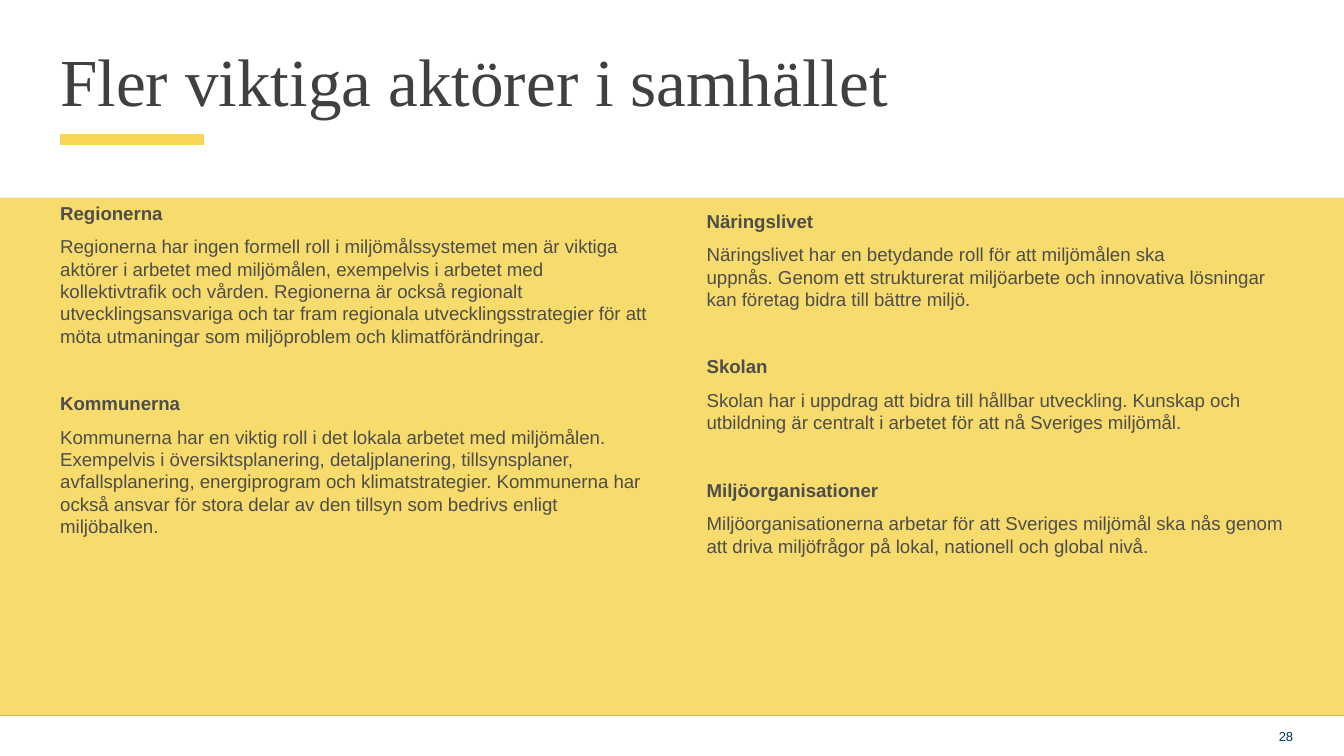
"""Build a slide on further actors in Swedish environmental work."""
from dataclasses import dataclass

from lxml import etree
from pptx import Presentation
from pptx import util as u
from pptx.dml.color import RGBColor
from pptx.enum import shapes, text
from pptx.oxml.ns import qn

SANS, SERIF = "Arial", "Times New Roman"
GREY = "4D4D4A"
NAVY = "003366"
HARD_SPACE = chr(160)


@dataclass
class Actor:
    name: str
    role: str


@dataclass
class Column:
    left: float
    inset: float
    actors: list[Actor]


@dataclass
class Rule:
    left: float
    right: float
    top: float
    color: str
    width: float


COLUMNS = [
    Column(5.16, 0.24, [
        Actor("Näringslivet",
              "Näringslivet har en betydande roll för att miljömålen ska "
              f"uppnås.{HARD_SPACE}Genom ett strukturerat miljöarbete och "
              "innovativa lösningar kan företag bidra till bättre miljö."),
        Actor("Skolan",
              "Skolan har i uppdrag att bidra till hållbar utveckling. "
              "Kunskap och utbildning är centralt i arbetet för att nå "
              "Sveriges miljömål."),
        Actor("Miljöorganisationer",
              "Miljöorganisationerna arbetar för att Sveriges miljömål ska "
              "nås genom att driva miljöfrågor på lokal, nationell och "
              "global nivå."),
    ]),
    Column(0.35, 0.18, [
        Actor("Regionerna",
              "Regionerna har ingen formell roll i miljömålssystemet men är "
              "viktiga aktörer i arbetet med miljömålen, exempelvis i "
              "arbetet med kollektivtrafik och vården. Regionerna är också "
              "regionalt utvecklingsansvariga och tar fram regionala "
              "utvecklingsstrategier för att möta utmaningar som "
              "miljöproblem och klimatförändringar."),
        Actor("Kommunerna",
              "Kommunerna har en viktig roll i det lokala arbetet med "
              "miljömålen. Exempelvis i översiktsplanering, "
              "detaljplanering, tillsynsplaner, avfallsplanering, "
              "energiprogram och klimatstrategier. Kommunerna har också "
              "ansvar för stora delar av den tillsyn som bedrivs enligt "
              "miljöbalken."),
    ]),
]
FOOT = Rule(0, 10, 5.32, NAVY, 0.4)
ACCENT = Rule(0.45, 1.52, 1.04, "F7D654", 6)


def paint(target, color: str) -> None:
    """Make a fill solid in the given hex colour."""
    target.solid()
    target.fore_color.rgb = RGBColor.from_string(color)


def draw_rule(slide, rule: Rule) -> None:
    """Draw a horizontal line without shadow."""
    top = u.Inches(rule.top)
    line = slide.shapes.add_connector(
        shapes.MSO_CONNECTOR.STRAIGHT,
        u.Inches(rule.left), top, u.Inches(rule.right), top)
    paint(line.line.fill, rule.color)
    line.line.width = u.Pt(rule.width)
    etree.SubElement(line._element.spPr, qn("a:effectLst"))


def draw_band(slide) -> None:
    """Draw the translucent yellow band behind the columns."""
    band = slide.shapes.add_shape(
        shapes.MSO_SHAPE.RECTANGLE,
        u.Inches(0), u.Inches(1.47), u.Inches(10.02), u.Inches(3.86))
    band.shadow.inherit = False
    band.line.fill.background()
    paint(band.fill, "F6D554")
    color = band._element.spPr.find(".//" + qn("a:srgbClr"))
    etree.SubElement(color, qn("a:alpha"), val="85000")


def add_frame(slide, left: float, top: float, width: float, height: float):
    """Add a wrapping text box and return its frame."""
    box = slide.shapes.add_textbox(
        u.Inches(left), u.Inches(top), u.Inches(width), u.Inches(height))
    box.text_frame.word_wrap = True
    return box.text_frame


def add_run(para, words: str, size: float, color: str,
            face: str = SANS, bold: bool = False) -> None:
    """Add one styled run to a paragraph."""
    run = para.add_run()
    run.text = words
    run.font.size = u.Pt(size)
    run.font.name = face
    run.font.bold = bold
    paint(run.font.fill, color)


def draw_column(slide, column: Column) -> None:
    """Write the actors of one column, each a heading and its text."""
    frame = add_frame(slide, column.left, 1.32, 4.57, 3.71)
    frame.margin_top = u.Inches(column.inset)
    for i, actor in enumerate(column.actors):
        head = frame.add_paragraph() if i else frame.paragraphs[0]
        if i:
            head.space_before = u.Pt(24)
        head.space_after = u.Pt(6)
        add_run(head, actor.name, 10, GREY, bold=True)
        body = frame.add_paragraph()
        add_run(body, actor.role, 10, GREY)
        head.line_spacing = body.line_spacing = u.Pt(12)


def main() -> None:
    """Build and save the slide."""
    deck = Presentation()
    deck.slide_width = u.Inches(10)
    deck.slide_height = u.Inches(10 * 9 / 16)
    slide = deck.slides.add_slide(deck.slide_layouts[6])
    draw_rule(slide, FOOT)
    draw_band(slide)

    title = add_frame(slide, 0.35, 0.29, 9.37, 0.8).paragraphs[0]
    title.line_spacing = u.Pt(39.6)
    add_run(title, "Fler viktiga aktörer i samhället", 36, "404040", SERIF)

    frame = add_frame(slide, 7.47, 5.33, 2.25, 0.3)
    frame.vertical_anchor = text.MSO_ANCHOR.MIDDLE
    number = frame.paragraphs[0]
    number.alignment = text.PP_ALIGN.RIGHT
    add_run(number, "28", 7, NAVY)

    for column in COLUMNS:
        draw_column(slide, column)
    draw_rule(slide, ACCENT)
    deck.save("out.pptx")


if __name__ == "__main__":
    main()
